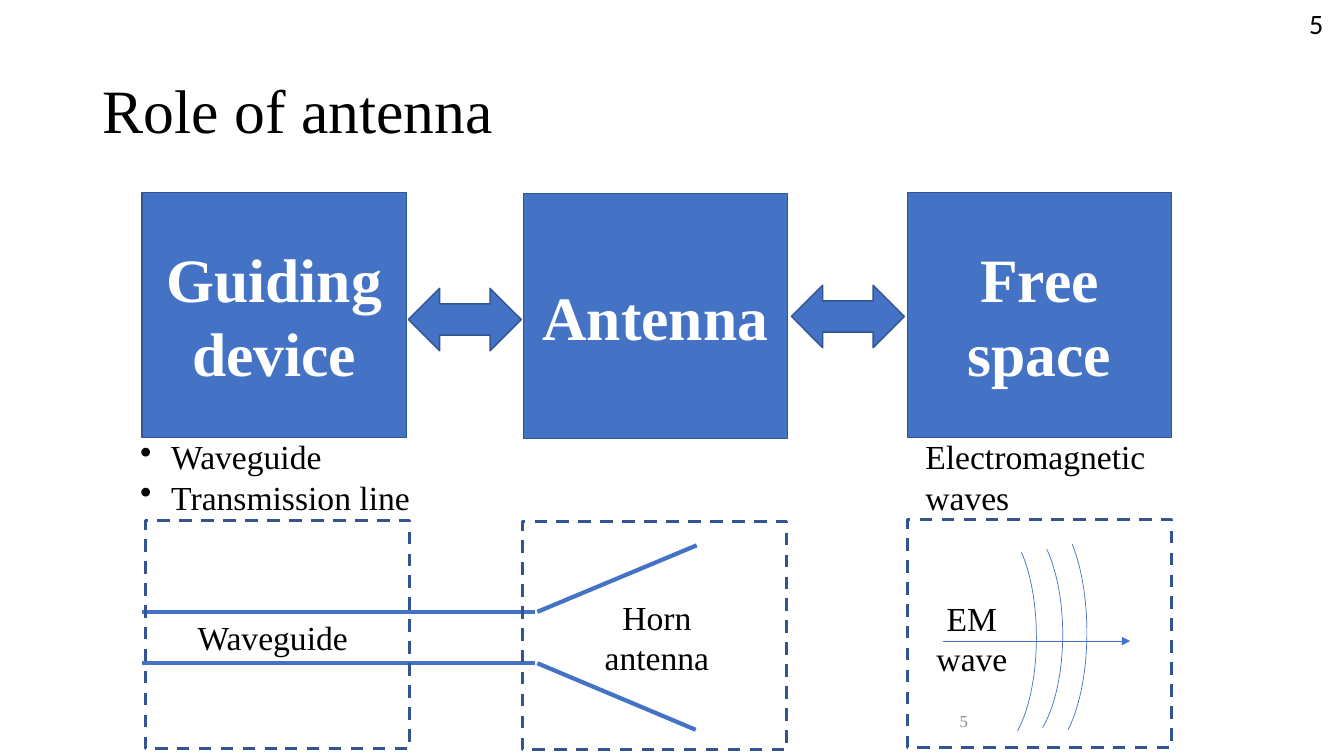
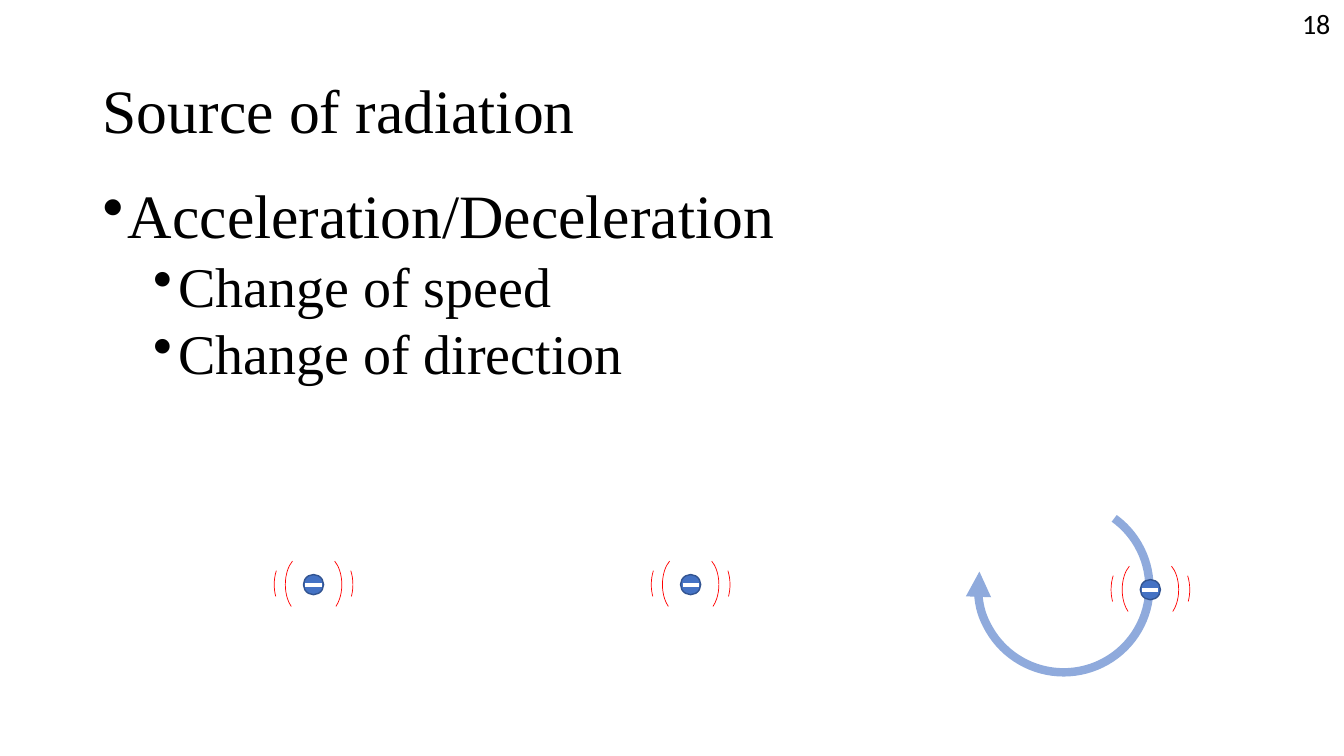
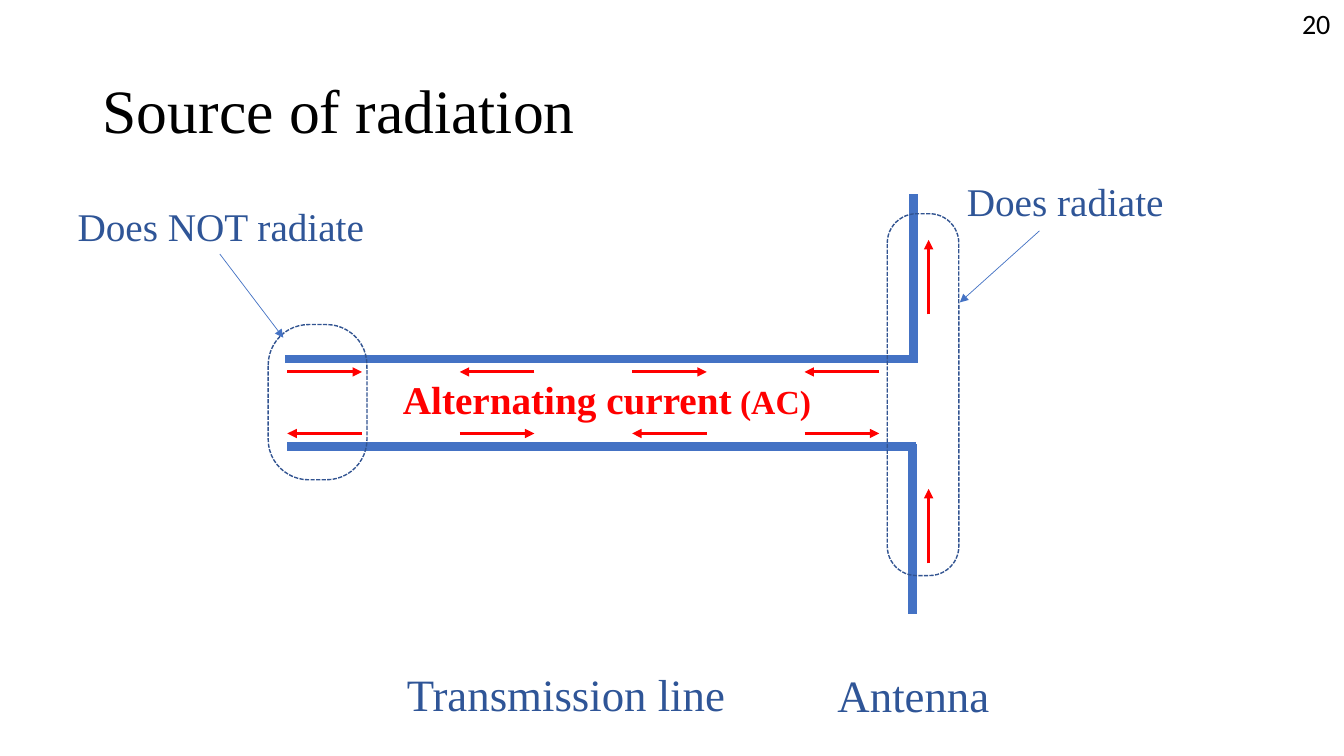
from lxml import etree
from pptx import Presentation
from pptx.dml.color import RGBColor
from pptx.enum import dml, shapes, text
from pptx.oxml import ns
from pptx.util import Inches, Pt

SERIF, SANS = "Times New Roman", "Calibri"
BLACK, WHITE, RED, GRAY = "000000", "FFFFFF", "FF0000", "8C8C8C"
BLUE, EDGE, NAVY, PALE = "4472C4", "325491", "2F5597", "8FAADC"
KIND = shapes.MSO_SHAPE
DASH = dml.MSO_LINE.DASH
FINE_DASH = dml.MSO_LINE.SQUARE_DOT
CENTER = text.PP_ALIGN.CENTER
MIDDLE = text.MSO_ANCHOR.MIDDLE

STAGES = [(1.41, 1.91, "Guiding device"), (5.19, 1.92, "Antenna"), (9, 1.91, "Free space")]
STAGE_SIZE = (2.62, 2.43)
EXCHANGES = [(4.05, 2.86), (7.85, 2.83)]
SKETCH_FRAMES = [(1.44, 5.16), (5.18, 5.17), (9, 5.15)]
SKETCH_SIZE = (2.62, 2.27)
HORN = [
    ((1.41, 6.07), (5.31, 6.07)), ((5.33, 6.07), (6.91, 5.41)),
    ((1.41, 6.58), (5.31, 6.58)), ((5.33, 6.58), (6.9, 7.24)),
]
WAVEFRONTS = [(9.59, 5.16, 0.95, 2.27), (9.83, 5.06, 0.95, 2.43), (9.35, 5.17, 0.93, 2.31)]
SKETCH_LABELS = [
    ((5.67, 5.87, 1.69, 0.91), "Horn antenna"),
    ((1.86, 6.07, 1.69, 0.5), "Waveguide"),
    ((9.02, 5.88, 1.24, 0.91), "EM wave"),
]

CAUSES = ["Change of speed", "Change of direction"]
CHARGES = [(3.11, 5.8), (6.85, 5.8), (11.41, 5.85)]
RIPPLES = [(0.12, 291, 64.93), (0.23, 315.26, 39.03)]

WIRES = [
    ((2.83, 3.56), (9.06, 3.56)), ((9.06, 3.6), (9.06, 1.92)),
    ((2.85, 4.43), (9.09, 4.43)), ((9.05, 6.09), (9.05, 4.4)),
]
CURRENT_ROWS = [(3.69, 0), (4.3, 1)]
CURRENT_LEFT, CURRENT_STEP, CURRENT_LENGTH = 2.85, 1.71, 0.74
ANTENNA_CURRENT_STARTS = [3.12, 5.59]
ZONES = [(2.66, 3.22, 0.98, 1.54), (8.8, 2.12, 0.71, 3.59)]
POINTERS = [((2.18, 2.52), (2.81, 3.35)), ((10.31, 2.29), (9.52, 3))]
LINE_LABELS = [
    ((3.75, 6.63, 3.73, 0.61), "Transmission line", 32, 0.9),
    ((8.07, 6.68, 1.98, 0.56), "Antenna", 32, 0.8),
    ((0.63, 2.01, 3.12, 0.61), "Does NOT radiate", 28, 0.9),
    ((9.44, 1.76, 2.25, 0.61), "Does radiate", 28, 0.9),
]


def rgb(value):
    return RGBColor.from_string(value)


def style_line(line, color, width, dash=None, arrow=False):
    line.color.rgb = rgb(color)
    line.width = Pt(width)
    if dash:
        line.dash_style = dash
    if arrow:
        etree.SubElement(line._get_or_add_ln(), ns.qn("a:tailEnd"), type="triangle")


def style_paragraph(para, size, color=BLACK, font=SERIF, bold=False, align=None,
                    spacing=None, before=None, bullet=None):
    para.alignment = align
    if spacing:
        para.line_spacing = spacing
    if before:
        para.space_before = Pt(before)
    if bullet:
        margin, hanging = bullet
        props = para._p.get_or_add_pPr()
        props.set("marL", str(Inches(margin)))
        props.set("indent", str(-Inches(hanging)))
        etree.SubElement(props, ns.qn("a:buChar"), char="•")
    para.font.size = Pt(size)
    para.font.name = font
    para.font.bold = bold
    para.font.color.rgb = rgb(color)


def add_text(page, at, lines, size, anchor=text.MSO_ANCHOR.TOP, wrap=True, **style):
    frame = page.shapes.add_textbox(*map(Inches, at)).text_frame
    frame.word_wrap = wrap
    frame.vertical_anchor = anchor
    frame.text = "\n".join(lines)
    for para in frame.paragraphs:
        style_paragraph(para, size, **style)
    return frame


def add_shape(page, kind, at, color=EDGE, width=1, fill=None, dash=None, arrow=False, angles=()):
    shape = page.shapes.add_shape(kind, *map(Inches, at))
    shape.shadow.inherit = False
    for index, angle in enumerate(angles):
        shape.adjustments[index] = angle % 360 * 0.6
    if fill:
        shape.fill.solid()
        shape.fill.fore_color.rgb = rgb(fill)
    else:
        shape.fill.background()
    style_line(shape.line, color, width, dash, arrow)
    return shape


def add_line(page, start, end, color, width, arrow=False):
    line = page.shapes.add_connector(shapes.MSO_CONNECTOR.STRAIGHT, *map(Inches, start + end))
    style_line(line.line, color, width, arrow=arrow)
    etree.SubElement(line._element.spPr, ns.qn("a:effectLst"))


def add_page(deck, title, number):
    page = deck.slides.add_slide(deck.slide_layouts[6])
    add_text(page, (0.92, 0.4, 11.5, 1.45), [title], 44, anchor=MIDDLE, spacing=0.9)
    add_text(page, (12.77, 0.02, 0.57, 0.44), [number], 20, font=SANS, align=CENTER)
    return page


def add_charge(page, x, y):
    add_shape(page, KIND.OVAL, (x - 0.1, y - 0.1, 0.2, 0.2), fill=BLUE)
    add_line(page, (x - 0.08, y), (x + 0.08, y), WHITE, 3)
    for offset, start, end in RIPPLES:
        for center, angles in ((x + offset, (start, end)), (x - offset, (180 - end, 180 - start))):
            add_shape(page, KIND.ARC, (center - 0.16, y - 0.28, 0.32, 0.56), RED, 0.5, angles=angles)


def build_role(deck):
    page = add_page(deck, "Role of antenna", "5")
    for left, top, name in STAGES:
        stage = add_shape(page, KIND.RECTANGLE, (left, top) + STAGE_SIZE, fill=BLUE)
        stage.text_frame.text = name
        stage.text_frame.vertical_anchor = MIDDLE
        style_paragraph(stage.text_frame.paragraphs[0], 44, WHITE, bold=True, align=CENTER)
    for spot in EXCHANGES:
        add_shape(page, KIND.LEFT_RIGHT_ARROW, spot + (1.12, 0.62), fill=BLUE)
    add_text(page, (1.29, 4.28, 2.91, 0.91), ["Waveguide", "Transmission line"], 24,
             wrap=False, bullet=(0.31, 0.31))
    add_text(page, (9.08, 4.28, 2.46, 0.91), ["Electromagnetic waves"], 24)
    for start, end in HORN:
        add_line(page, start, end, BLUE, 3)
    for spot in SKETCH_FRAMES:
        add_shape(page, KIND.RECTANGLE, spot + SKETCH_SIZE, width=2.25, dash=DASH)
    for at in WAVEFRONTS:
        add_shape(page, KIND.ARC, at, BLUE, 0.5, angles=(290.5, 73.32))
    add_line(page, (9.35, 6.36), (11.21, 6.36), BLUE, 0.5, arrow=True)
    for at, label in SKETCH_LABELS:
        add_text(page, at, [label], 24, align=CENTER)
    add_text(page, (9.42, 6.95, 3, 0.4), ["5"], 12, anchor=MIDDLE, color=GRAY)


def build_acceleration(deck):
    page = add_page(deck, "Source of radiation", "18")
    body = add_text(page, (0.92, 1.79, 7.13, 2.31), ["Acceleration/Deceleration"], 44,
                    spacing=0.9, before=10, bullet=(0.25, 0.25))
    for cause in CAUSES:
        para = body.add_paragraph()
        para.text = cause
        para.level = 1
        style_paragraph(para, 40, spacing=0.9, before=5, bullet=(0.75, 0.25))
    add_shape(page, KIND.ARC, (9.7, 4.98, 1.7, 1.69), PALE, 6, arrow=True, angles=(306.3, 190.49))
    for x, y in CHARGES:
        add_charge(page, x, y)


def build_current(deck):
    page = add_page(deck, "Source of radiation", "20")
    for start, end in WIRES:
        add_line(page, start, end, BLUE, 6)
    for y, phase in CURRENT_ROWS:
        for index in range(4):
            left = CURRENT_LEFT + index * CURRENT_STEP
            ends = [(left, y), (left + CURRENT_LENGTH, y)]
            if (index + phase) % 2:
                ends.reverse()
            add_line(page, *ends, RED, 2.25, arrow=True)
    for y in ANTENNA_CURRENT_STARTS:
        add_line(page, (9.21, y), (9.21, y - CURRENT_LENGTH), RED, 2.25, arrow=True)
    for at, label, size, spacing in LINE_LABELS:
        add_text(page, at, [label], size, color=NAVY, align=CENTER, spacing=spacing, before=10)
    caption = add_text(page, (3.79, 3.73, 4.46, 0.61), ["Alternating current"], 28,
                       color=RED, bold=True, align=CENTER, spacing=0.9, before=10)
    span = caption.paragraphs[0].add_run()
    span.text = " (AC)"
    span.font.size = Pt(24)
    for at in ZONES:
        zone = add_shape(page, KIND.ROUNDED_RECTANGLE, at, dash=FINE_DASH)
        zone.adjustments[0] = 0.41
    for start, end in POINTERS:
        add_line(page, start, end, BLUE, 0.5, arrow=True)


def main():
    deck = Presentation()
    deck.slide_width, deck.slide_height = Inches(13.33), Inches(7.5)
    build_role(deck)
    build_acceleration(deck)
    build_current(deck)
    deck.save("out.pptx")


if __name__ == "__main__":
    main()
